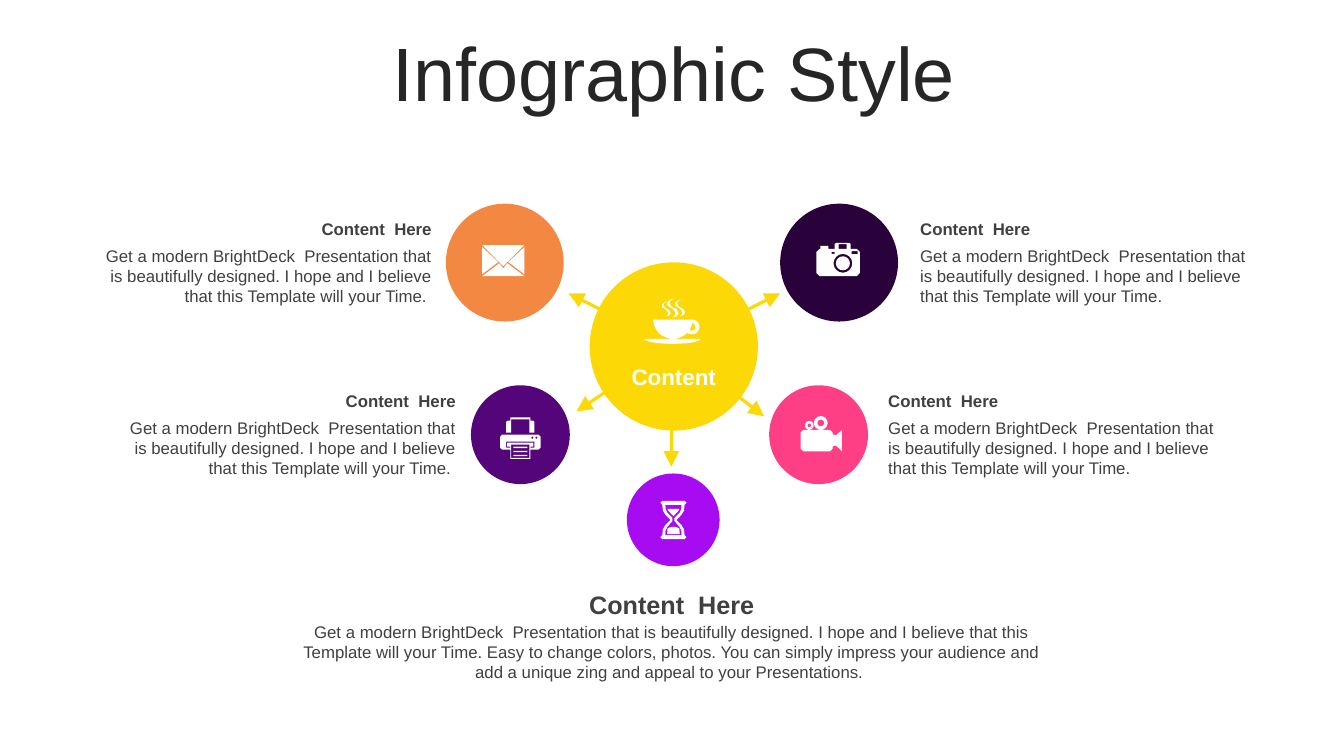
from math import cos, pi, sin

from lxml.etree import SubElement
from pptx import Presentation
from pptx.dml.color import RGBColor as RGB
from pptx.enum.shapes import MSO_CONNECTOR as Link, MSO_SHAPE as Kind
from pptx.enum.text import MSO_ANCHOR as Anchor, PP_ALIGN as Align
from pptx.oxml.ns import qn
from pptx.util import Pt

FONT = "Arial"
WHITE = RGB(0xFF, 0xFF, 0xFF)
INK = RGB(0x26, 0x26, 0x26)
GREY = RGB(0x40, 0x40, 0x40)
YELLOW = RGB(0xFC, 0xD8, 0x07)
ORANGE = RGB(0xF3, 0x88, 0x43)
NIGHT = RGB(0x29, 0x02, 0x3C)
PLUM = RGB(0x53, 0x05, 0x79)
PINK = RGB(0xFF, 0x3F, 0x85)
VIOLET = RGB(0xA7, 0x0B, 0xF2)

HEAD = "Content  Here"
LEAD = ("Get a modern BrightDeck  Presentation that is beautifully designed. "
        "I hope and I believe that this Template will your Time.")
MORE = (" Easy to change colors, photos. You can simply impress your audience "
        "and add a unique zing and appeal to your Presentations.")

HUB = (421.2, 187.4, 120.2)


def paint(shape, color):
    shape.shadow.inherit = False
    shape.fill.solid()
    shape.fill.fore_color.rgb = color
    shape.line.fill.background()


def dot(slide, color, left, top, size):
    paint(slide.shapes.add_shape(Kind.OVAL, Pt(left), Pt(top), Pt(size), Pt(size)), color)


def trace(slide, left, top, *loops):
    """Fill closed white outlines given relative to left and top; inner loops are holes."""
    pens = [[(Pt(left + x), Pt(top + y)) for x, y in loop] for loop in loops]
    build = slide.shapes.build_freeform(*pens[0][0], scale=1.0)
    build.add_line_segments(pens[0][1:], close=True)
    for pen in pens[1:]:
        build.move_to(*pen[0])
        build.add_line_segments(pen[1:], close=True)
    paint(build.convert_to_shape(), WHITE)


def arc(x, y, wide, high, first=0, last=2, steps=16):
    """Points on an ellipse about x, y; first and last are in half turns."""
    turns = [pi * (first + (last - first) * step / steps) for step in range(steps + 1)]
    return [(x + wide * cos(t), y + high * sin(t)) for t in turns]


def box(x, y, wide, high):
    return [(x, y), (x + wide, y), (x + wide, y + high), (x, y + high)]


def slab(x, y, wide, high, cut):
    """Rectangle with its corners cut off."""
    end, low = x + wide, y + high
    return [(x + cut, y), (end - cut, y), (end, y + cut), (end, low - cut),
            (end - cut, low), (x + cut, low), (x, low - cut), (x, y + cut)]


def flip(half, wide):
    """Close a left half outline with its mirror image."""
    return half + [(wide - x, y) for x, y in reversed(half)]


def mail(slide, left, top):
    side = [(0, 1.4), (11.5, 12.2), (0, 20.9)]
    trace(slide, left, top, [(0, 0), (30.2, 0), (15.1, 15.1)], side,
          [(30.2 - x, y) for x, y in side],
          [(12.2, 13), (15.1, 16.6), (18, 13), (30.2, 22.3), (0, 22.3)])


def printer(slide, left, top):
    wide = 28.8
    sheet = [(7.9, 1.4), (7.9, 10.8), (4.3, 10.8), (4.3, 3.2), (5.2, 2.2), (7.2, 2.2), (7.2, 0)]
    body = [(1.4, 12.2), (0, 13.7), (0, 21.6), (1.4, 23), (7.2, 23), (7.2, 29.5)]
    slot = [(4.3, 17.3), (4.3, 21.6), (7.2, 21.6), (7.2, 20.9), (5, 20.9), (5, 18)]
    rows = [box(9.4, 20.9 + 2.9 * row, 10, 0.9) for row in range(3)]
    eyes = [arc(x, 14.4, 0.8, 0.8, steps=8) for x in (23, 25.9)]
    # the slot runs along the outside and back along the inside
    rim = slot[:4] + slot[4:] + [(wide - x, y) for x, y in slot[:3:-1] + slot[3::-1]]
    trace(slide, left, top, flip(sheet, wide), flip(body, wide), rim,
          box(7.9, 19.4, 13, 9.4), *rows, *eyes)


def glass(slide, left, top):
    wide = 18.7
    outer = [(1.4, 0), (0, 1.4), (1.4, 2.9), (1.8, 7), (3.6, 10), (7.2, 13.7),
             (3.6, 17.3), (1.8, 20.4), (1.4, 24.5), (0, 26), (1.4, 27.4)]
    inner = [(3.6, 2.9), (3.8, 6), (5, 8.6), (8.6, 12.2), (8.6, 14.4), (5, 18.7), (3.6, 21.5), (3.6, 24.5)]
    trace(slide, left, top, flip(outer, wide), flip(inner, wide),
          flip([(5, 5.8), (5.8, 7.2), (9.2, 10.8)], wide),
          flip([(8, 18.7), (5.2, 19.6), (4.8, 23.8)], wide))


def camera(slide, left, top):
    case = [(2.2, 4.3), (2.9, 4.3), (2.9, 2.2), (8.6, 2.2), (8.6, 4.3), (13, 4.3), (13, 0.9),
            (14, 0), (23.5, 0), (24.5, 0.9), (24.5, 4.3), (28.8, 4.3), (31, 6.5), (31, 21.6),
            (28.8, 23.8), (2.2, 23.8), (0, 21.6), (0, 6.5)]
    trace(slide, left, top, case, box(15.8, 0.9, 5.8, 3.4), box(10.8, 6.5, 2.2, 1.4),
          box(25.2, 6, 4.3, 2), arc(18.9, 14.6, 6.7, 6.7), arc(18.9, 14.6, 5, 5))


def film(slide, left, top):
    case = [(22.9, 13), (25.2, 13.7), (29.5, 10), (29.5, 25.2), (25.2, 21), (22.9, 21.6)]
    trace(slide, left, top, slab(0, 9.8, 22.9, 15.4, 2), case,
          arc(14.4, 4.9, 4.9, 4.9), arc(14.4, 4.9, 2.4, 2.4),
          arc(6.2, 6.6, 3.1, 3.1), arc(6.2, 6.6, 1.3, 1.3))


def cup(slide, left, top):
    outside = arc(33.8, 20.3, 5.6, 5.3, -0.45, 0.7)
    inside = arc(33.8, 20.3, 2.8, 2.7, 0.7, -0.45)
    curl = [(0, 0), (-2.9, 1.4), (-3.6, 3.6), (-1.8, 6), (1.4, 7.6), (2.9, 10.8), (1.5, 12.7),
            (-2.2, 13.7), (0, 12.6), (0.7, 10.1), (-1.5, 7.3), (-5, 5), (-5, 2.5), (-2.5, 0.7)]
    steam = [[(x + size * a, y + size * b) for a, b in curl]
             for x, y, size in ((16.6, 2.2, 0.78), (21.6, 0, 1), (26.6, 0.7, 0.88))]
    trace(slide, left, top, arc(20.5, 15.1, 14.1, 13.7, 0, 1), outside + inside,
          arc(20.2, 28.8, 20.2, 3.6, 0, 1), *steam)


# colour, circle (left, top, size), arrow tip, icon, icon corner
NODES = [
    (NIGHT, (557.3, 145.5, 84.2), (557.3, 209.5), camera, (583.2, 173.5)),
    (ORANGE, (318.5, 145.5, 84.2), (406.1, 209.5), mail, (344.4, 175)),
    (PINK, (549.4, 275.2, 70.6), (545.8, 297.4), film, (571.9, 297.2)),
    (PLUM, (336.4, 275.2, 70.6), (411.8, 293.8), printer, (357.3, 298.2)),
    (VIOLET, (447.8, 338.2, 66.2), (479.5, 333.4), glass, (471.7, 357.7)),
]
# left, top, width, alignment, heading size, wording
NOTES = [
    (650.2, 152.6, 252, Align.LEFT, 12, LEAD),
    (627.4, 275.4, 252, Align.LEFT, 12, LEAD),
    (63.5, 152.6, 252, Align.RIGHT, 12, LEAD + " "),
    (80.7, 275.4, 252, Align.RIGHT, 12, LEAD + " "),
    (208.4, 421.2, 542.9, Align.CENTER, 18, LEAD + MORE + " "),
]


def write(frame, words, size, color, align, bold=False):
    frame.word_wrap = True
    para = frame.paragraphs[0]
    para.alignment = align
    run = para.add_run()
    run.text = words
    font = run.font
    font.name, font.size, font.bold = FONT, Pt(size), bold
    font.color.rgb = color
    return para


def label(slide, left, top, wide, high, words, size, color, align, bold=False):
    frame = slide.shapes.add_textbox(Pt(left), Pt(top), Pt(wide), Pt(high)).text_frame
    frame.vertical_anchor = Anchor.MIDDLE if bold else Anchor.TOP
    write(frame, words, size, color, align, bold)


def title(slide, left, top, wide, high):
    shape = slide.shapes.title
    shape.left, shape.top, shape.width, shape.height = Pt(left), Pt(top), Pt(wide), Pt(high)
    shape.text_frame.vertical_anchor = Anchor.MIDDLE
    para = write(shape.text_frame, "Infographic Style", 54, INK, Align.CENTER)
    para.line_spacing = 0.9


def arrow(slide, start, end):
    line = slide.shapes.add_connector(Link.STRAIGHT, *map(Pt, start + end))
    line.line.color.rgb = YELLOW
    line.line.width = Pt(2.25)
    SubElement(line.line._get_or_add_ln(), qn("a:tailEnd"), type="triangle", w="lg", len="lg")
    SubElement(line._element.spPr, qn("a:effectLst"))


def wheel(slide, left, top, size):
    """Hub with its arrows and the circles around it."""
    mid = (left + size / 2, top + size / 2)
    for node in NODES:
        tip = node[2]
        arrow(slide, (tip[0] if node[3] is glass else mid[0], mid[1]), tip)
    dot(slide, YELLOW, left, top, size)
    cup(slide, left + 39, top + 25.8)
    label(slide, left + 1.4, top + 68.2, size - 2.8, 26.6, "Content", 16, WHITE, Align.CENTER, True)
    for color, spot, _, icon, corner in NODES:
        dot(slide, color, *spot)
        icon(slide, *corner)


def note(slide, left, top, wide, align, size, words):
    label(slide, left, top, wide, 21.6, HEAD, size, GREY, align, True)
    label(slide, left, top + 19.4, wide, 51.1, words, 12, GREY, align)


def main():
    deck = Presentation()
    deck.slide_width, deck.slide_height = Pt(960), Pt(540)
    slide = deck.slides.add_slide(deck.slide_layouts[5])
    title(slide, 25.6, 26.6, 911.5, 56.9)
    for item in NOTES:
        note(slide, *item)
    wheel(slide, *HUB)
    deck.save("out.pptx")


if __name__ == "__main__":
    main()
